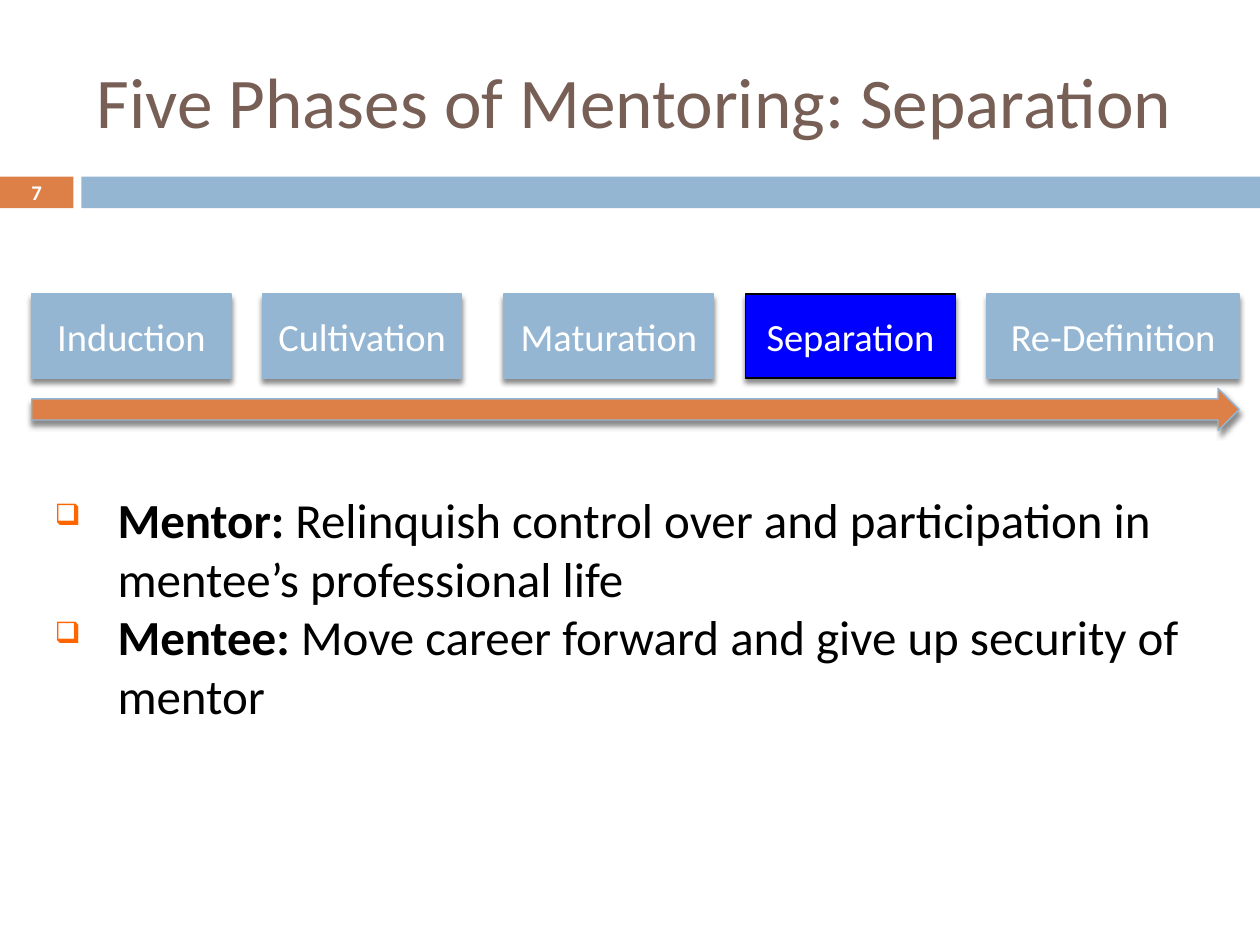
from lxml.etree import SubElement
from pptx import Presentation
from pptx.dml.color import RGBColor
from pptx.enum.shapes import MSO_SHAPE as Shape
from pptx.enum.text import MSO_ANCHOR as Anchor, PP_ALIGN as Align
from pptx.oxml import parse_xml
from pptx.oxml.ns import nsdecls, qn
from pptx.util import Cm, Pt

ORANGE = RGBColor(0xDD, 0x80, 0x47)
LIGHT_BLUE = RGBColor(0x94, 0xB6, 0xD2)
BRIGHT_BLUE = RGBColor(0x00, 0x00, 0xFF)
BROWN = RGBColor(0x77, 0x5F, 0x55)
BULLET_ORANGE = RGBColor(0xFF, 0x66, 0x00)
BLACK = RGBColor(0x00, 0x00, 0x00)
WHITE = RGBColor(0xFF, 0xFF, 0xFF)

CURRENT_PHASE = "Separation"
# name, left and width in centimetres
PHASES = [
    ("Induction", 0.64, 4.02),
    ("Cultivation", 5.29, 4.02),
    ("Maturation", 10.16, 4.23),
    (CURRENT_PHASE, 15.03, 4.23),
    ("Re-Definition", 19.9, 5.08),
]
ROLES = [
    ("Mentor: ", "Relinquish control over and participation in mentee’s professional life"),
    ("Mentee: ", "Move career forward and give up security of mentor"),
]


class SlideBuilder:
    """Holds the text style and the slide being filled."""

    font_name = "Calibri"

    def __init__(self, page):
        self.page = page

    def add_span(self, para, text, **formats):
        span = para.add_run()
        span.text = text
        color = formats.pop("color")
        for name, value in {"name": self.font_name, **formats}.items():
            setattr(span.font, name, value)
        span.font.color.rgb = color

    def shape(self, kind, area, fill, line=None, raised=False):
        """Draw a filled preset shape; a raised one casts a soft shadow."""
        box = self.page.shapes.add_shape(kind, *map(Cm, area))
        box.shadow.inherit = False
        box.fill.solid()
        box.fill.fore_color.rgb = fill
        if line is None:
            box.line.fill.background()
        else:
            box.line.color.rgb = line
            box.line.width = Pt(0.79)
        if raised:
            effects = box._element.spPr.find(qn("a:effectLst"))
            effects.append(parse_xml(
                f'<a:outerShdw {nsdecls("a")} blurRad="{Pt(3)}" dist="{Pt(2.4)}" '
                'dir="5400000" rotWithShape="0"><a:srgbClr val="000000">'
                '<a:alpha val="45000"/></a:srgbClr></a:outerShdw>'))
        return box

    def phase(self, name, left, width):
        current = name == CURRENT_PHASE
        fill, line = (BRIGHT_BLUE, BLACK) if current else (LIGHT_BLUE, LIGHT_BLUE)
        box = self.shape(Shape.RECTANGLE, (left, 5.93, width, 1.69), fill, line, True)
        self.label(box, name, Align.CENTER, size=Pt(22), color=WHITE)

    def label(self, box, text, alignment, **formats):
        """Put one vertically centred line into a shape or text box."""
        frame = box.text_frame
        frame.word_wrap = True
        frame.vertical_anchor = Anchor.MIDDLE
        para = frame.paragraphs[0]
        para.alignment = alignment
        self.add_span(para, text, **formats)

    def text_box(self, area):
        box = self.page.shapes.add_textbox(*map(Cm, area))
        box.text_frame.word_wrap = True
        return box

    def bullets(self, area, items):
        frame = self.text_box(area).text_frame
        for index, (lead, detail) in enumerate(items):
            para = frame.add_paragraph() if index else frame.paragraphs[0]
            self.bullet(para)
            for text, bold in ((lead, True), (detail, False)):
                self.add_span(para, text, size=Pt(28), color=BLACK, bold=bold)

    def bullet(self, para):
        """Give the paragraph a hanging indent and an orange box mark."""
        props = para._p.get_or_add_pPr()
        indent = Cm(1.27)
        for name, value in {"marL": indent, "indent": -indent}.items():
            props.set(name, str(value))
        color = SubElement(props, qn("a:buClr"))
        SubElement(color, qn("a:srgbClr"), val=str(BULLET_ORANGE))
        SubElement(props, qn("a:buSzPct"), val="60000")
        SubElement(props, qn("a:buChar"), char="❑")


def main():
    deck = Presentation()
    deck.slide_width, deck.slide_height = Cm(25.4), Cm(19.05)
    slide = SlideBuilder(deck.slides.add_slide(deck.slide_layouts[6]))

    number_bar = slide.shape(Shape.RECTANGLE, (0, 3.56, 1.48, 0.64), ORANGE)
    for side in ("left", "right", "top", "bottom"):
        setattr(number_bar.text_frame, f"margin_{side}", 0)
    slide.label(number_bar, "7", Align.CENTER, size=Pt(11.9), color=WHITE, bold=True)
    slide.shape(Shape.RECTANGLE, (1.64, 3.56, 23.76, 0.64), LIGHT_BLUE)

    title = slide.text_box((1.7, 0.64, 22.66, 2.74))
    slide.label(title, "Five Phases of Mentoring: Separation", Align.LEFT,
                size=Pt(40.7), color=BROWN)

    for phase in PHASES:
        slide.phase(*phase)
    slide.shape(Shape.RIGHT_ARROW, (0.64, 7.83, 24.34, 0.85), ORANGE, LIGHT_BLUE, True)

    slide.bullets((0.85, 9.74, 23.92, 5.05), ROLES)
    deck.save("out.pptx")


if __name__ == "__main__":
    main()
